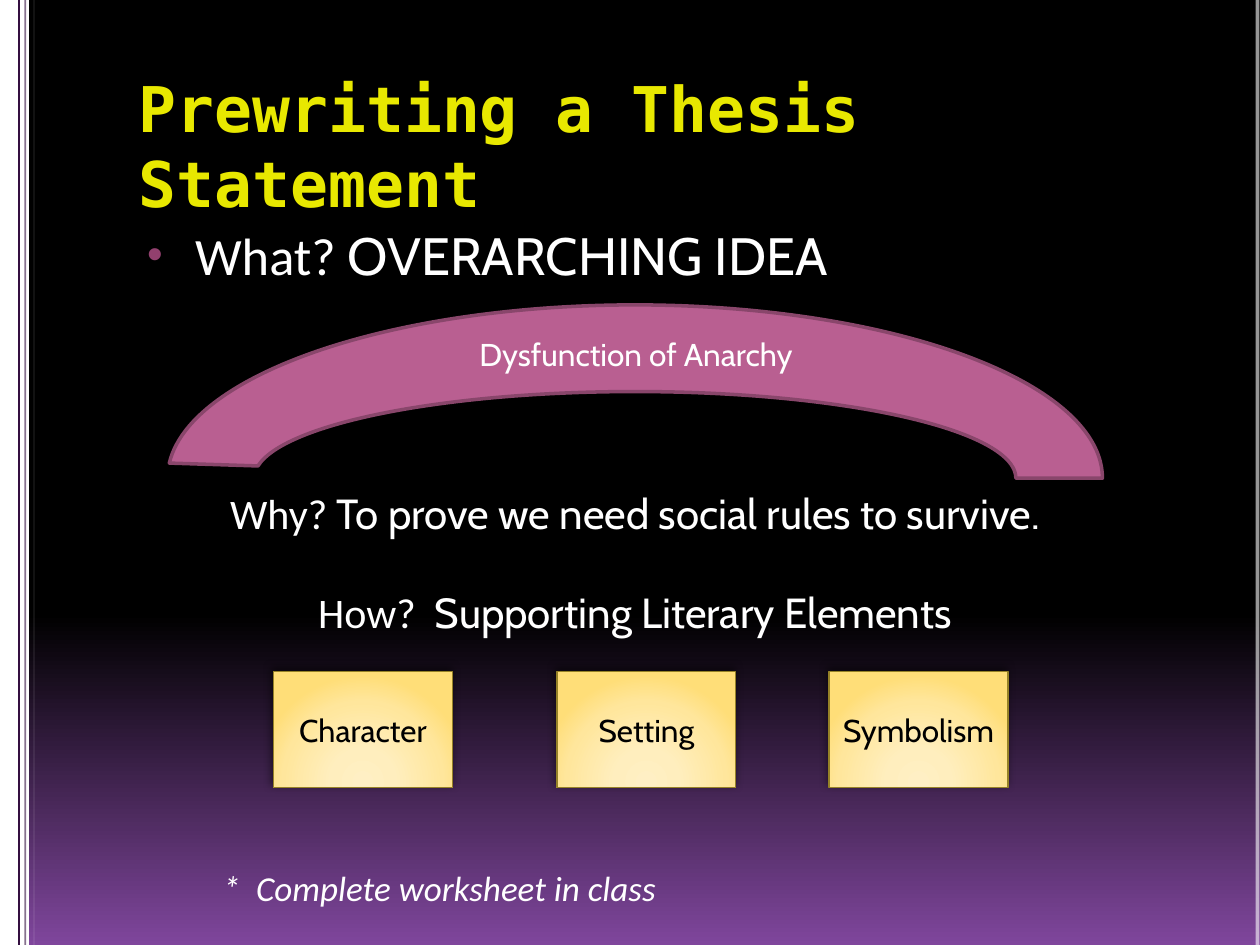
from pptx import Presentation
from pptx.dml.color import RGBColor
from pptx.enum.shapes import MSO_CONNECTOR, MSO_SHAPE
from pptx.enum.text import MSO_ANCHOR, PP_ALIGN
from pptx.oxml import parse_xml
from pptx.oxml.ns import nsdecls
from pptx.util import Inches, Pt

LEFT, CENTER = PP_ALIGN.LEFT, PP_ALIGN.CENTER
TOP, MIDDLE = MSO_ANCHOR.TOP, MSO_ANCHOR.MIDDLE
RECTANGLE, BLOCK_ARC = MSO_SHAPE.RECTANGLE, MSO_SHAPE.BLOCK_ARC
STRAIGHT = MSO_CONNECTOR.STRAIGHT
TITLE_ONLY = 5
WIDTH, HEIGHT = 10, 7.5
WHITE, BLACK = "FFFFFF", "000000"

TITLE = {"text": "Prewriting a Thesis Statement", "size": 36, "name": "DejaVu Sans Mono",
         "color": "E8E800", "bold": True}
WHAT = [{"text": "What? ", "size": 30, "name": "Calibri"},
        {"text": "OVERARCHING IDEA", "size": 30}]
ARCH_LABEL = [{"text": "Dysfunction of Anarchy"}]
WHY = [{"text": "Why? ", "size": 24, "name": "Calibri"},
       {"text": "To prove we need social rules to survive.", "size": 24}]
HOW = [{"text": "How?  ", "size": 24, "name": "Calibri"},
       {"text": "Supporting Literary Elements", "size": 24}]
REMINDER = [{"text": "*  Complete worksheet in class", "size": 20, "name": "Calibri",
             "italic": True}]
ELEMENTS = [("Character", 2.17), ("Setting", 4.42), ("Symbolism", 6.58)]
EDGE_LINES = [(0.15, "340F40", 1, 100), (0.2, "340F40", 1, 59),
              (0.27, WHITE, 0.25, 59), (9.98, WHITE, 2.25, 59)]
NIGHT_STOPS = [(0, BLACK), (65, BLACK), (100, "7F469C")]
GOLD_STOPS = [(0, "FFEFC4"), (30, "FFEEBE"), (75, "FFE69C"), (100, "FFDE78")]
DOWNWARD = '<a:lin ang="5400000" scaled="0"/>'
FROM_BOTTOM = ('<a:path path="circle"><a:fillToRect l="50000" t="100000" r="50000" b="10000"/>'
               '</a:path>')
CARD_SHADOW = ('<a:outerShdw blurRad="63500" dist="25400" dir="14700000" rotWithShape="0">'
               '<a:srgbClr val="000000"><a:alpha val="50000"/></a:srgbClr></a:outerShdw>')


def rgb(value):
    """Turn a hex string into a colour."""
    return RGBColor.from_string(value)


def xml(tag, inner="", attributes=""):
    """Build one drawing element."""
    return parse_xml(f'<a:{tag} {nsdecls("a")} {attributes}>{inner}</a:{tag}>')


def make_gradient(owner, stops, direction):
    """Replace the first solid fill inside an element by a gradient."""
    marks = "".join(f'<a:gs pos="{place * 1000}"><a:srgbClr val="{color}"/></a:gs>'
                    for place, color in stops)
    solid = owner.xpath(".//a:solidFill")[0]
    solid.getparent().replace(solid, xml("gradFill", f"<a:gsLst>{marks}</a:gsLst>{direction}"))


def write(shape, paragraphs, align=CENTER, anchor=TOP, gap=0):
    """Write paragraphs of formatted spans into a shape."""
    frame = shape.text_frame
    frame.word_wrap, frame.vertical_anchor = True, anchor
    for index, spans in enumerate(paragraphs):
        para = frame.add_paragraph() if index else frame.paragraphs[0]
        para.alignment = align
        if index:
            para.space_before = Pt(gap)
        for values in spans:
            settings = {"size": 18, "name": "Cabin", "color": WHITE, **values}
            span = para.add_run()
            span.text = settings.pop("text")
            span.font.color.rgb = rgb(settings.pop("color"))
            settings["size"] = Pt(settings["size"])
            for key, value in settings.items():
                setattr(span.font, key, value)


def add_text(page, area, paragraphs, **layout):
    """Add a wrapping text box."""
    box = page.shapes.add_textbox(*map(Inches, area))
    write(box, paragraphs, **layout)
    return box


def add_form(page, kind, area, fill, line=None, weight=1):
    """Add a preset shape with a plain fill and an optional outline."""
    shape = page.shapes.add_shape(kind, *map(Inches, area))
    shape.shadow.inherit = False
    shape.fill.solid()
    shape.fill.fore_color.rgb = rgb(fill)
    if line:
        shape.line.color.rgb = rgb(line)
        shape.line.width = Pt(weight)
    else:
        shape.line.fill.background()
    return shape


def add_edge(page, left, color, weight, opacity):
    """Add a full-height vertical line."""
    line = page.shapes.add_connector(STRAIGHT, Inches(left), 0, Inches(left), Inches(HEIGHT))
    line.line.color.rgb = rgb(color)
    line.line.width = Pt(weight)
    line.element.spPr.append(xml("effectLst"))
    if opacity < 100:
        color_node = line.element.spPr.xpath(".//a:srgbClr")[0]
        color_node.append(xml("alpha", attributes=f'val="{opacity * 1000}"'))


def add_card(page, label, left):
    """Add a golden card with a soft shadow."""
    card = add_form(page, RECTANGLE, (left, 5.33, 1.42, 0.92), "FFE69C", "968227", 0.75)
    make_gradient(card.element.spPr, GOLD_STOPS, FROM_BOTTOM)
    card.element.spPr.xpath("./a:effectLst")[0].append(
        parse_xml(CARD_SHADOW.replace("<a:outerShdw", f'<a:outerShdw {nsdecls("a")}', 1)))
    write(card, [[{"text": label, "color": BLACK}]], anchor=MIDDLE)


def add_bullet(para):
    """Give a paragraph a hanging coloured bullet."""
    properties = para._p.get_or_add_pPr()
    properties.set("marL", str(Inches(0.45)))
    properties.set("indent", str(Inches(-0.38)))
    properties.append(xml("buClr", '<a:srgbClr val="92406E"/>'))
    properties.append(xml("buSzPct", attributes='val="85000"'))
    properties.append(xml("buFont", attributes='typeface="Arial"'))
    properties.append(xml("buChar", attributes='char="•"'))


def main():
    """Build the slide and save it."""
    deck = Presentation()
    deck.slide_width, deck.slide_height = Inches(WIDTH), Inches(HEIGHT)
    page = deck.slides.add_slide(deck.slide_layouts[TITLE_ONLY])
    page.background.fill.solid()
    page.background.fill.fore_color.rgb = rgb(BLACK)
    make_gradient(page.element, NIGHT_STOPS, DOWNWARD)

    add_form(page, RECTANGLE, (0, 0, 0.23, HEIGHT), WHITE)
    for edge in EDGE_LINES:
        add_edge(page, *edge)

    title = page.shapes.title
    title.left, title.top, title.width, title.height = map(Inches, (1, 0.5, 8.5, 1))
    write(title, [[TITLE]], align=LEFT)

    what = add_text(page, (1, 1.72, 8.5, 0.6), [WHAT], align=LEFT)
    add_bullet(what.text_frame.paragraphs[0])

    arch = add_form(page, BLOCK_ARC, (1.33, 2.42, 7.42, 2.75), "B95F91", "89466B", 2)
    for index, value in enumerate((109.112, 0, 0.25)):
        arch.adjustments[index] = value
    arch.text_frame.margin_bottom = Inches(0.65)
    write(arch, [ARCH_LABEL], anchor=MIDDLE)

    add_text(page, (1.33, 3.82, 7.42, 1.3), [WHY, HOW], gap=28)
    for label, left in ELEMENTS:
        add_card(page, label, left)
    add_text(page, (1.67, 6.83, 5.58, 0.44), [REMINDER], align=LEFT)
    deck.save("out.pptx")


if __name__ == "__main__":
    main()
